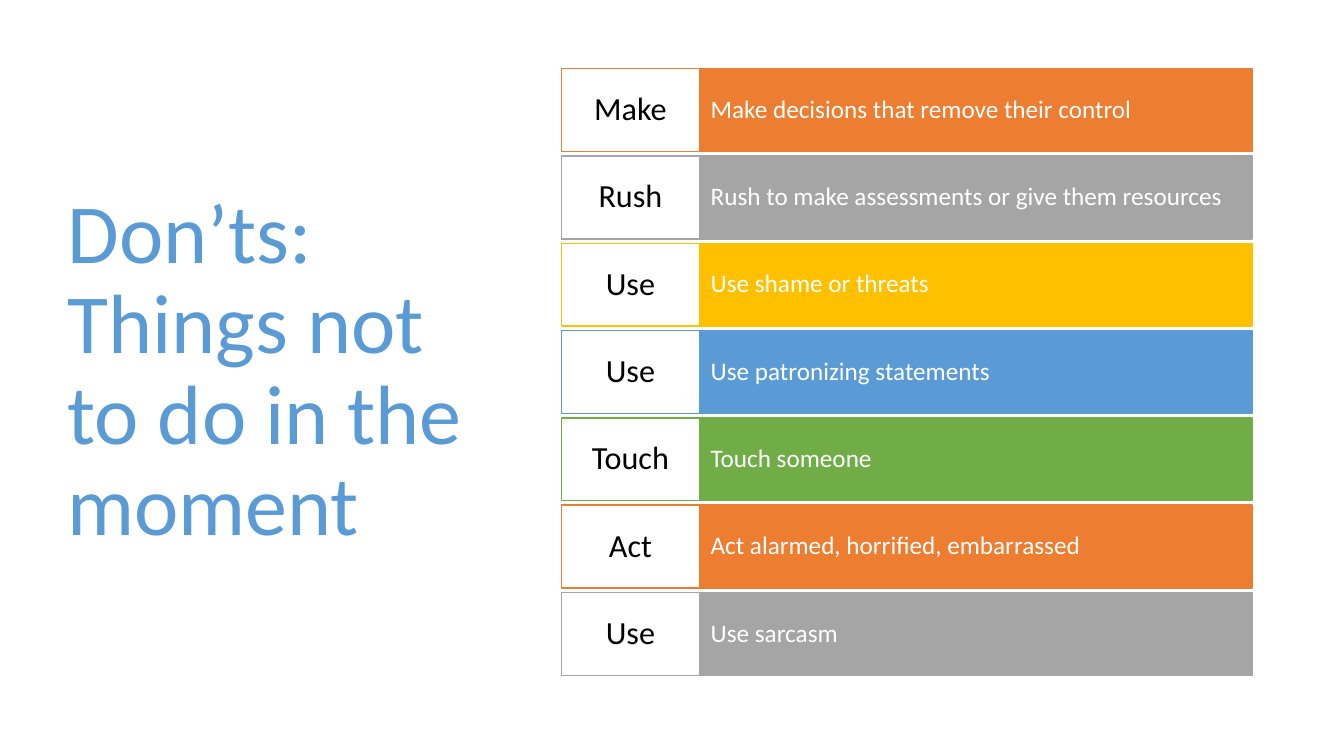
"""Build the slide listing things not to do in the moment."""
from dataclasses import dataclass

from pptx import Presentation
from pptx.dml.color import RGBColor
from pptx.enum.shapes import MSO_SHAPE
from pptx.enum.text import MSO_ANCHOR, PP_ALIGN
from pptx.shapes.autoshape import Shape
from pptx.slide import Slide
from pptx.util import Cm, Pt

ORANGE = RGBColor(0xED, 0x7D, 0x31)
GRAY = RGBColor(0xA5, 0xA5, 0xA5)
GOLD = RGBColor(0xFF, 0xC0, 0x00)
BLUE = RGBColor(0x5B, 0x9B, 0xD5)
GREEN = RGBColor(0x70, 0xAD, 0x47)
WHITE = RGBColor(0xFF, 0xFF, 0xFF)
BLACK = RGBColor(0x00, 0x00, 0x00)

TOP = 1.73
ROW_PITCH = 2.2
ROW_HEIGHT = 2.09


@dataclass(frozen=True)
class Dont:
    verb: str
    advice: str
    color: RGBColor


@dataclass(frozen=True)
class Column:
    left: float
    width: float
    size: float
    align: PP_ALIGN
    inset_x: float
    inset_y: float


VERB = Column(14.15, 3.48, 23, PP_ALIGN.CENTER, 0.18, 0.2)
ADVICE = Column(17.63, 13.92, 18, PP_ALIGN.LEFT, 0.28, 0.53)
TITLE = Column(1.45, 10.57, 60, PP_ALIGN.LEFT, 0.25, 0.13)

DONTS = [
    Dont("Make", "Make decisions that remove their control", ORANGE),
    Dont("Rush", "Rush to make assessments or give them resources", GRAY),
    Dont("Use", "Use shame or threats", GOLD),
    Dont("Use", "Use patronizing statements", BLUE),
    Dont("Touch", "Touch someone", GREEN),
    Dont("Act", "Act alarmed, horrified, embarrassed", ORANGE),
    Dont("Use", "Use sarcasm", GRAY),
]


def write(shape: Shape, column: Column, text: str, color: RGBColor) -> None:
    frame = shape.text_frame
    frame.word_wrap = True
    frame.vertical_anchor = MSO_ANCHOR.MIDDLE
    frame.margin_left = frame.margin_right = Cm(column.inset_x)
    frame.margin_top = frame.margin_bottom = Cm(column.inset_y)
    paragraph = frame.paragraphs[0]
    paragraph.alignment = column.align
    paragraph.line_spacing = 0.9
    run = paragraph.add_run()
    run.text = text
    run.font.name = "Calibri"
    run.font.size = Pt(column.size)
    run.font.color.rgb = color


def add_title(slide: Slide, text: str) -> None:
    height = ROW_PITCH * (len(DONTS) - 1) + ROW_HEIGHT
    title = slide.shapes.add_textbox(
        Cm(TITLE.left), Cm(TOP), Cm(TITLE.width), Cm(height))
    write(title, TITLE, text, BLUE)


def add_cell(slide: Slide, column: Column, top: float, text: str,
             fill: RGBColor, line: RGBColor, ink: RGBColor) -> None:
    cell = slide.shapes.add_shape(
        MSO_SHAPE.RECTANGLE,
        Cm(column.left), Cm(top), Cm(column.width), Cm(ROW_HEIGHT))
    cell.shadow.inherit = False
    cell.fill.solid()
    cell.fill.fore_color.rgb = fill
    cell.line.color.rgb = line
    cell.line.width = Pt(1)
    write(cell, column, text, ink)


def main() -> None:
    deck = Presentation()
    deck.slide_width, deck.slide_height = Cm(33.87), Cm(19.05)
    slide = deck.slides.add_slide(deck.slide_layouts[6])
    add_title(slide, "Don’ts: Things not to do in the moment")
    for index, dont in enumerate(DONTS):
        top = TOP + index * ROW_PITCH
        add_cell(slide, ADVICE, top, dont.advice, dont.color, dont.color, WHITE)
        add_cell(slide, VERB, top, dont.verb, WHITE, dont.color, BLACK)
    deck.save("out.pptx")


if __name__ == "__main__":
    main()
